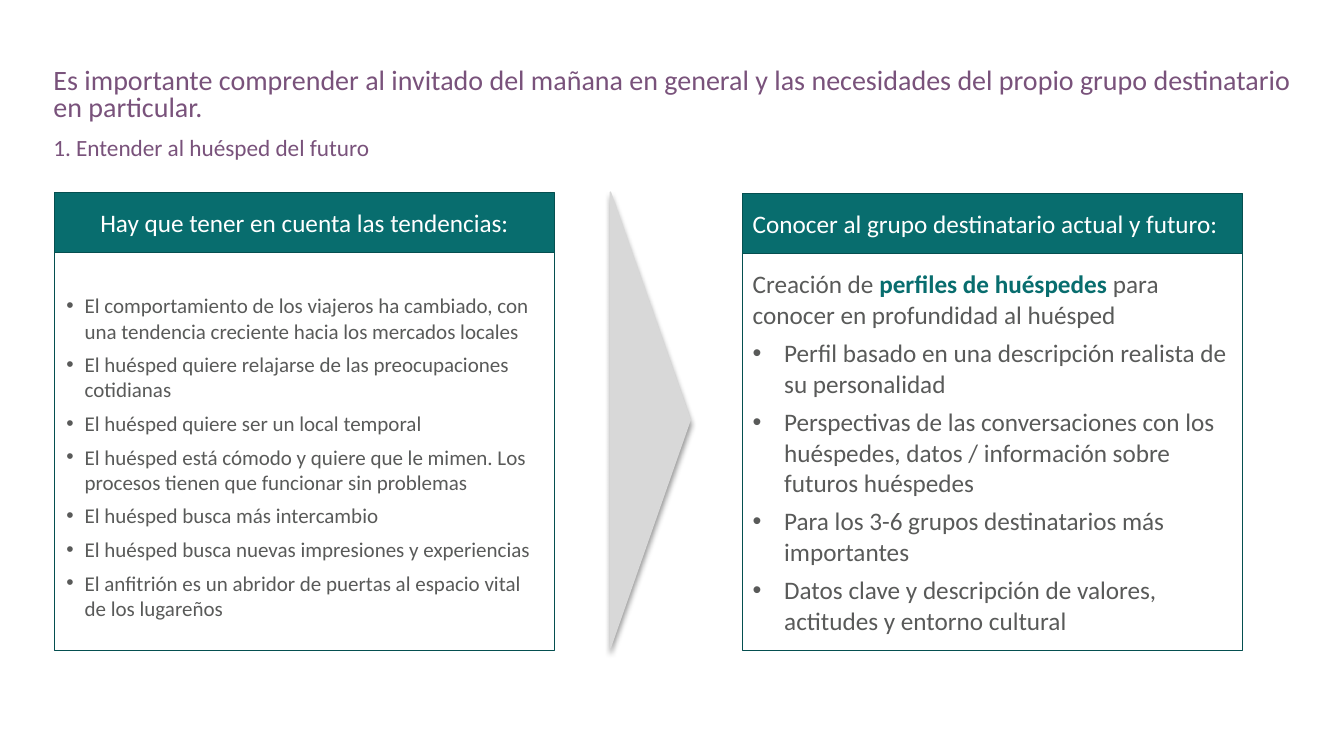
from lxml import etree
from pptx import Presentation
from pptx import util as u
from pptx.dml.color import RGBColor
from pptx.enum import shapes, text
from pptx.oxml.ns import qn

Pt = u.Pt
FONT = "Calibri"
HUES = {
    "plum": "79527B",
    "teal": "086D6E",
    "edge": "054F50",
    "gray": "595A59",
    "wedge": "D8D8D8",
    "white": "FFFFFF",
    "black": "000000",
}
LEFT, MID = text.PP_ALIGN.LEFT, text.PP_ALIGN.CENTER

TRENDS = [
    "El comportamiento de los viajeros ha cambiado, con una tendencia creciente "
    "hacia los mercados locales",
    "El huésped quiere relajarse de las preocupaciones cotidianas",
    "El huésped quiere ser un local temporal",
    "El huésped está cómodo y quiere que le mimen. Los procesos tienen que "
    "funcionar sin problemas",
    "El huésped busca más intercambio",
    "El huésped busca nuevas impresiones y experiencias",
    "El anfitrión es un abridor de puertas al espacio vital de los lugareños",
]
INTRO = [
    ("Creación de ", "gray", False),
    ("perfiles de huéspedes ", "teal", True),
    ("para conocer en profundidad al huésped", "gray", False),
]
GROUPS = [
    "Perfil basado en una descripción realista de su personalidad",
    "Perspectivas de las conversaciones con los huéspedes, datos / información "
    "sobre futuros huéspedes",
    "Para los 3-6 grupos destinatarios más importantes",
    "Datos clave y descripción de valores, actitudes y entorno cultural",
]


def hue(name):
    return RGBColor.from_string(HUES[name])


def frame(shape, anchor, top=3.6):
    tf = shape.text_frame
    tf.word_wrap = True
    tf.auto_size = text.MSO_AUTO_SIZE.NONE
    tf.vertical_anchor = anchor
    tf.margin_left = tf.margin_right = Pt(7.2)
    tf.margin_top, tf.margin_bottom = Pt(top), Pt(3.6)
    return tf


def add_run(para, words, size, color, bold=False):
    run = para.add_run()
    run.text = words
    font = run.font
    font.name, font.size, font.bold = FONT, Pt(size), bold
    font.color.rgb = hue(color)


def bullet(para, margin, hang):
    props = para._p.get_or_add_pPr()
    props.set("marL", str(Pt(margin)))
    props.set("indent", str(-Pt(hang)))
    tint = etree.SubElement(props, qn("a:buClr"))
    etree.SubElement(tint, qn("a:srgbClr"), val=HUES["gray"])
    etree.SubElement(props, qn("a:buFont"), typeface="Arial")
    etree.SubElement(props, qn("a:buChar"), char="•")


def add_form(slide, kind, box, fill, line):
    shape = slide.shapes.add_shape(kind, *map(Pt, box))
    shape.shadow.inherit = False
    if fill:
        shape.fill.solid()
        shape.fill.fore_color.rgb = hue(fill)
    else:
        shape.fill.background()
    shape.line.color.rgb = hue(line)
    shape.line.width = Pt(1)
    return shape


def add_heads(slide, x, y, wide):
    """Title with the chapter line below it."""
    title = slide.shapes.title
    title.left, title.top, title.width, title.height = map(Pt, (x, y, wide, 46))
    sub = slide.shapes.add_textbox(*map(Pt, (x, y + 51.8, wide, 24)))
    for shape, words, size, space in (
        (title, "Es importante comprender al invitado del mañana en general y las "
                "necesidades del propio grupo destinatario en particular.", 20, 0.8),
        (sub, "1. Entender al huésped del futuro", 16.6, 0.7),
    ):
        para = frame(shape, text.MSO_ANCHOR.TOP).paragraphs[0]
        para.alignment, para.line_spacing = LEFT, space
        add_run(para, words, size, "plum")


def add_panel(slide, box, head, align, intro, items, size, margin, hang, top=3.6):
    """Outlined list under a teal heading bar."""
    x, y, wide, high = box
    bar = 42.8
    rect = shapes.MSO_SHAPE.RECTANGLE
    body = add_form(slide, rect, (x, y + bar, wide, high - bar), None, "edge")
    tf = frame(body, text.MSO_ANCHOR.MIDDLE, top)
    para = tf.paragraphs[0]
    para.alignment = LEFT
    for words, color, bold in intro:
        add_run(para, words, size, color, bold)
    for i, item in enumerate(items):
        if i or intro:
            para = tf.add_paragraph()
            para.space_before = Pt(6)
        para.alignment = LEFT
        bullet(para, margin, hang)
        add_run(para, item, size, "gray")
    strip = add_form(slide, rect, (x, y, wide, bar), "teal", "edge")
    para = frame(strip, text.MSO_ANCHOR.MIDDLE).paragraphs[0]
    para.alignment = align
    add_run(para, head, 18, "white")


def add_wedge(slide, x, y, wide, high):
    """Triangle pointing right, turned inside the given box."""
    shift = (high - wide) / 2
    box = (x - shift, y + shift, high, wide)
    wedge = add_form(slide, shapes.MSO_SHAPE.ISOSCELES_TRIANGLE, box, "wedge", "wedge")
    wedge.rotation = 90
    effects = wedge._element.spPr.find(qn("a:effectLst"))
    shade = etree.SubElement(effects, qn("a:outerShdw"), blurRad=str(Pt(4)),
                             dist=str(Pt(3)), dir="5400000", rotWithShape="0")
    tint = etree.SubElement(shade, qn("a:srgbClr"), val=HUES["black"])
    etree.SubElement(tint, qn("a:alpha"), val="40000")


def main():
    deck = Presentation()
    deck.slide_width, deck.slide_height = Pt(960), Pt(540)
    slide = deck.slides.add_slide(deck.slide_layouts[5])
    add_heads(slide, 31, 45.4, 903)
    add_panel(slide, (39, 137.6, 357, 327), "Hay que tener en cuenta las tendencias:",
              MID, [], TRENDS, 15, 14.4, 13, top=11)
    add_wedge(slide, 436, 137.2, 57, 325.4)
    add_panel(slide, (530.6, 138.2, 357, 326.4),
              "Conocer al grupo destinatario actual y futuro:",
              LEFT, INTRO, GROUPS, 18, 22.5, 22.5)
    deck.save("out.pptx")


if __name__ == "__main__":
    main()
